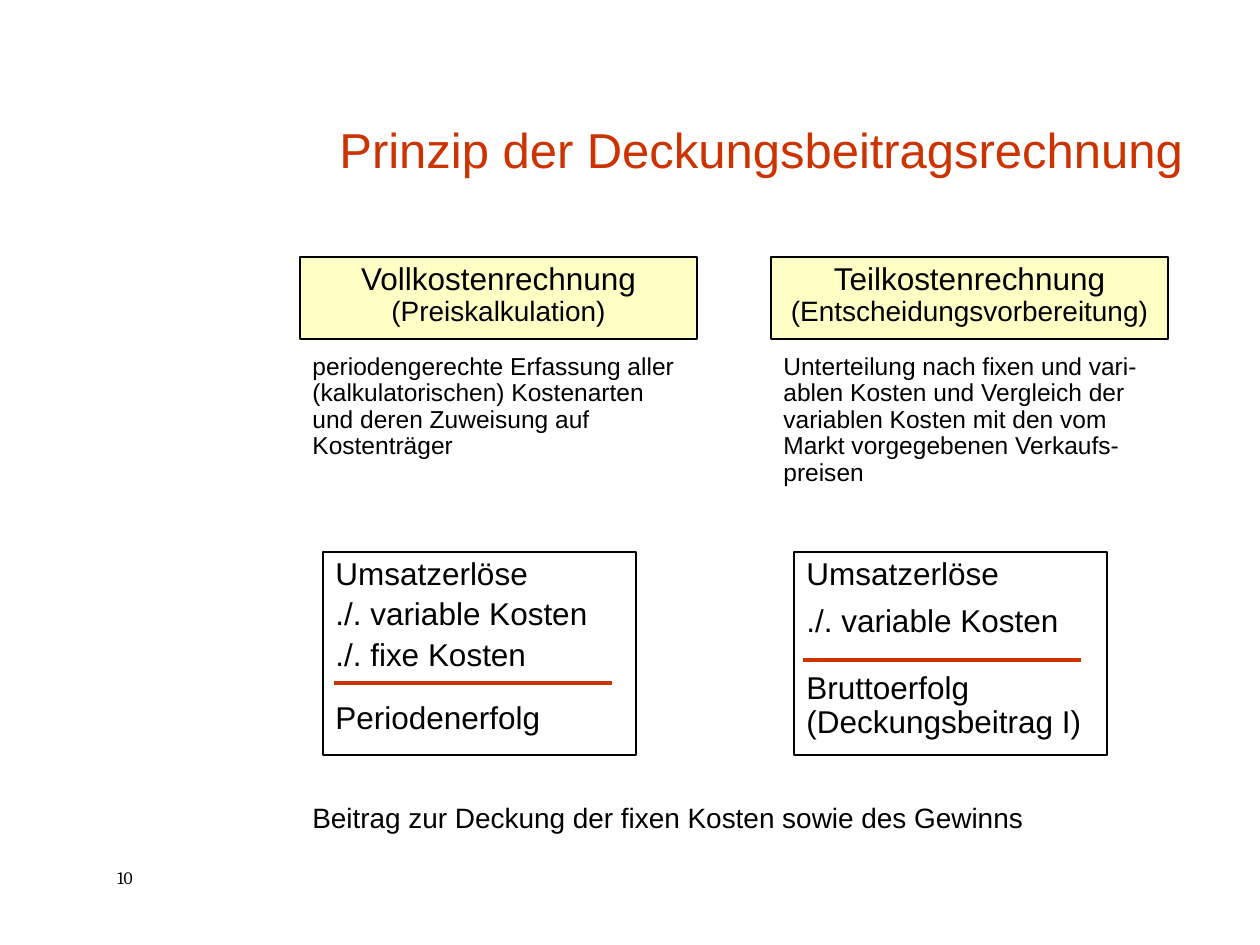
from lxml import etree
from pptx import Presentation
from pptx import util as u
from pptx.dml.color import RGBColor
from pptx.enum import shapes, text
from pptx.oxml.ns import qn

SCALE = 914400 / 126
COLORS = {"black": "000000", "red": "CC3300", "cream": "FFFFC5"}


def px(length):
    return u.Emu(round(length * SCALE))


def add_text(slide, box, paragraphs, size=18, font="Arial", color="black",
             align=text.PP_ALIGN.LEFT, anchor=text.MSO_ANCHOR.TOP,
             spacing=1.0, before=(), framed=False, fill=None):
    """Each paragraph is a list of (text, size) lines or a plain string."""
    box = [px(length) for length in box]
    if framed:
        shape = slide.shapes.add_shape(shapes.MSO_SHAPE.RECTANGLE, *box)
        shape.shadow.inherit = False
        shape.line.color.rgb = RGBColor.from_string(COLORS["black"])
        shape.line.width = u.Pt(0.75)
        if fill:
            shape.fill.solid()
            shape.fill.fore_color.rgb = RGBColor.from_string(COLORS[fill])
        else:
            shape.fill.background()
    else:
        shape = slide.shapes.add_textbox(*box)
    frame = shape.text_frame
    frame.word_wrap = True
    frame.vertical_anchor = anchor
    for index, lines in enumerate(paragraphs):
        paragraph = frame.paragraphs[0] if index == 0 else frame.add_paragraph()
        paragraph.alignment = align
        paragraph.line_spacing = spacing
        if index:
            paragraph.space_before = u.Pt(before[index - 1])
        if isinstance(lines, str):
            lines = [(lines, size)]
        for number, (words, points) in enumerate(lines):
            if number:
                paragraph.add_line_break()
            run = paragraph.add_run()
            run.text = words
            run.font.size = u.Pt(points)
            run.font.name = font
            run.font.color.rgb = RGBColor.from_string(COLORS[color])


presentation = Presentation()
presentation.slide_width, presentation.slide_height = px(1260), px(945)
slide = presentation.slides.add_slide(presentation.slide_layouts[6])

# Page number and title
add_text(slide, (105, 861, 84, 34), ["10"], size=10, font="Cambria")
add_text(slide, (263, 53, 932, 132), ["Prinzip der Deckungsbeitragsrechnung"],
         size=28, color="red", align=text.PP_ALIGN.RIGHT,
         anchor=text.MSO_ANCHOR.BOTTOM)

# Two costing methods: heading, description, calculation and sum line
methods = [
    {"left": 300, "heading": "Vollkostenrechnung", "purpose": "(Preiskalkulation)",
     "description": "periodengerechte Erfassung aller (kalkulatorischen) "
                    "Kostenarten und deren Zuweisung auf Kostenträger",
     "calculation": ["Umsatzerlöse", "./. variable Kosten", "./. fixe Kosten",
                     "Periodenerfolg"],
     "before": (3.6, 3.6, 16.6), "sum_line": (334, 612, 683)},
    {"left": 771, "heading": "Teilkostenrechnung",
     "purpose": "(Entscheidungsvorbereitung)",
     "description": "Unterteilung nach fixen und vari-ablen Kosten und Vergleich "
                    "der variablen Kosten mit den vom Markt vorgegebenen "
                    "Verkaufs-preisen",
     "calculation": ["Umsatzerlöse", "./. variable Kosten",
                     "Bruttoerfolg (Deckungsbeitrag I)"],
     "before": (7.2, 18.9), "sum_line": (803, 1081, 660)},
]
for method in methods:
    left = method["left"]
    add_text(slide, (left, 257, 397, 82),
             [[(method["heading"], 18), (method["purpose"], 16)]],
             align=text.PP_ALIGN.CENTER, spacing=0.9, framed=True, fill="cream")
    add_text(slide, (left, 348, 397, 190), [method["description"]],
             size=14, spacing=0.9)
    add_text(slide, (left + 23, 552, 313, 203), method["calculation"],
             spacing=0.9, before=method["before"], framed=True)
    start, end, top = method["sum_line"]
    line = slide.shapes.add_connector(shapes.MSO_CONNECTOR.STRAIGHT,
                                      px(start), px(top), px(end), px(top))
    line.line.color.rgb = RGBColor.from_string(COLORS["red"])
    line.line.width = u.Pt(2)
    etree.SubElement(line._element.spPr, qn("a:effectLst"))

# Conclusion
add_text(slide, (300, 794, 908, 47),
         ["Beitrag zur Deckung der fixen Kosten sowie des Gewinns"], size=16)

presentation.save("out.pptx")
